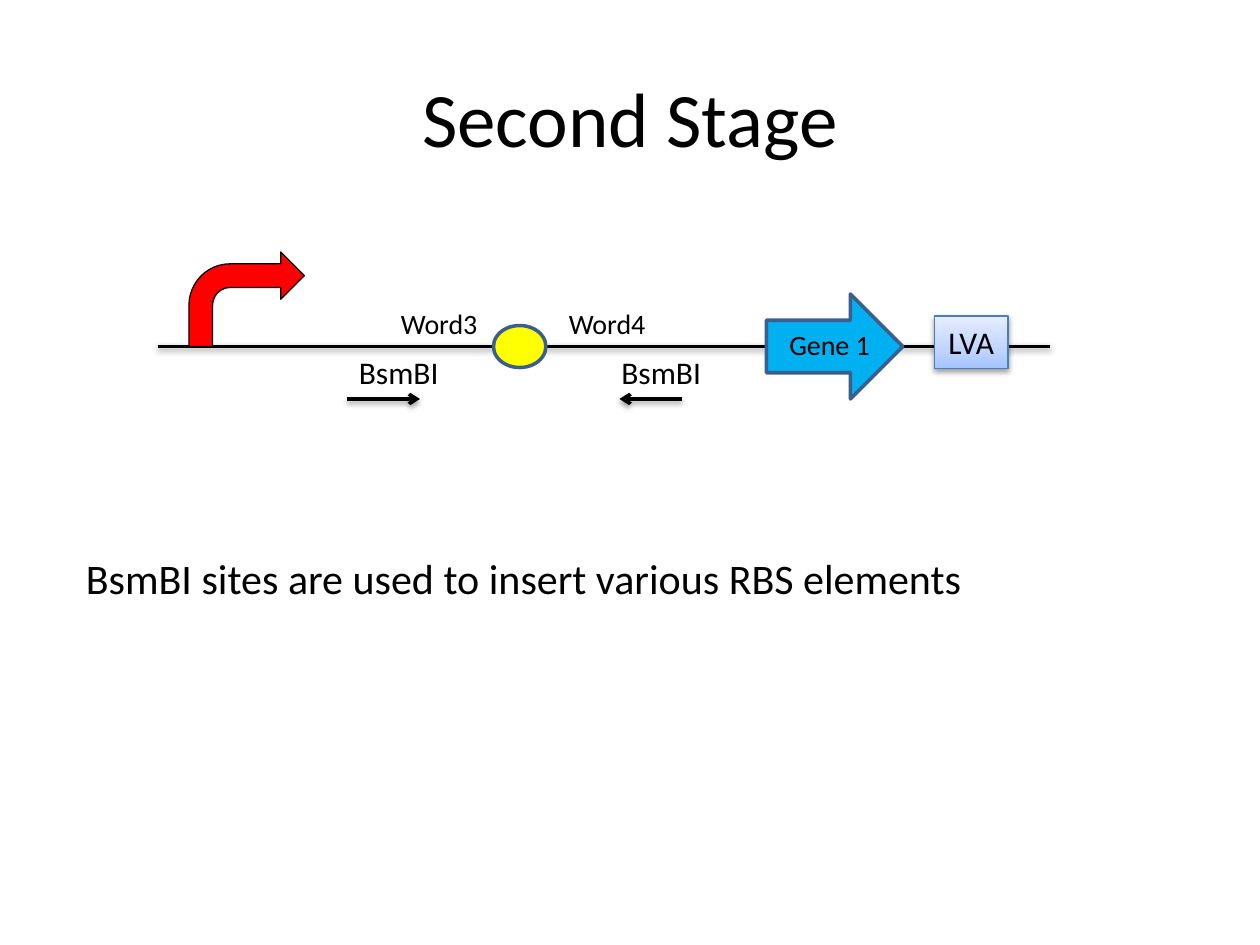
from copy import deepcopy

from lxml import etree
from pptx import Presentation
from pptx.dml.color import RGBColor
from pptx.enum.shapes import MSO_CONNECTOR, MSO_SHAPE
from pptx.enum.text import MSO_ANCHOR, MSO_AUTO_SIZE, PP_ALIGN
from pptx.oxml import parse_xml
from pptx.oxml.ns import nsdecls, qn
from pptx.util import Inches, Pt

STRAIGHT = MSO_CONNECTOR.STRAIGHT
RECTANGLE = MSO_SHAPE.RECTANGLE
ELLIPSE = MSO_SHAPE.OVAL
RIGHT_ARROW = MSO_SHAPE.RIGHT_ARROW
BENT_ARROW = MSO_SHAPE.BENT_ARROW
MIDDLE, TOP = MSO_ANCHOR.MIDDLE, MSO_ANCHOR.TOP
CENTER, LEFT = PP_ALIGN.CENTER, PP_ALIGN.LEFT
FIT_SHAPE = MSO_AUTO_SIZE.SHAPE_TO_FIT_TEXT

FONT = "Calibri"
COLORS = {
    "ink": "000000",
    "gene": "00B0F0",
    "site": "FFFF00",
    "promoter": "FF0000",
    "outline": "3A5F8C",
    "tag_outline": "4B7EBC",
}
TAG_STOPS = [(0, "A4C4FF"), (0.35, "BFD4FF"), (1, "E6EEFF")]
BASELINE_ROW = 33


def grid(cells):
    """Convert grid cells, twelve to the inch, to a length."""
    return Inches(cells / 12)


def color(name):
    """Look up a palette colour."""
    return RGBColor.from_string(COLORS[name])


def write(shape, text, size, align=LEFT, anchor=TOP):
    """Put one formatted paragraph into a shape."""
    frame = shape.text_frame
    frame.text = text
    frame.word_wrap = True
    frame.vertical_anchor = anchor
    para = frame.paragraphs[0]
    para.alignment = align
    font = para.runs[0].font
    font.name, font.size = FONT, Pt(size)
    font.color.rgb = color("ink")


def add_label(shapes, text, column, row, width, height, size):
    """Add a left-aligned text box that grows with its text."""
    box = shapes.add_textbox(*map(grid, (column, row, width, height)))
    write(box, text, size)
    box.text_frame.auto_size = FIT_SHAPE


def add_shadow(shape):
    """Give a shape or line a soft shadow below it."""
    shape._element.spPr.append(parse_xml(
        f'<a:effectLst {nsdecls("a")}><a:outerShdw blurRad="40000" dist="20000"'
        ' dir="5400000" rotWithShape="0"><a:srgbClr val="000000">'
        '<a:alpha val="38000"/></a:srgbClr></a:outerShdw></a:effectLst>'))


def add_line(shapes, start, end, row, arrow=False):
    """Add a shadowed horizontal line, with an arrowhead if asked."""
    line = shapes.add_connector(STRAIGHT, *map(grid, (start, row, end, row)))
    line.line.color.rgb = color("ink")
    line.line.width = Pt(2)
    if arrow:
        etree.SubElement(line.line._get_or_add_ln(), qn("a:tailEnd"), type="arrow")
    add_shadow(line)


def add_part(shapes, kind, column, row, width, height, fill, outline, weight):
    """Add a filled and outlined part of the construct."""
    part = shapes.add_shape(kind, *map(grid, (column, row, width, height)))
    part.fill.solid()
    part.fill.fore_color.rgb = color(fill)
    part.line.color.rgb = color(outline)
    part.line.width = Pt(weight)
    part.shadow.inherit = False


def add_cut_site(shapes, column, start, end):
    """Add a grouped enzyme label with its direction arrow."""
    site = shapes.add_group_shape().shapes
    add_label(site, "BsmBI", column, BASELINE_ROW, 12, 4.8, 18)
    add_line(site, start, end, BASELINE_ROW + 5, arrow=True)


def add_tag(shapes, text, column, row, width, height):
    """Add a gradient box holding the tag name."""
    tag = shapes.add_shape(RECTANGLE, *map(grid, (column, row, width, height)))
    tag.fill.gradient()
    tag.fill.gradient_angle = 90
    stop_list = tag._element.spPr.find(".//" + qn("a:gsLst"))
    stop_list.append(deepcopy(stop_list[0]))
    for stop, (position, shade) in zip(tag.fill.gradient_stops, TAG_STOPS):
        stop.position = position
        stop.color.rgb = RGBColor.from_string(shade)
    tag.line.color.rgb = color("tag_outline")
    tag.line.width = Pt(0.75)
    add_shadow(tag)
    write(tag, text, 18, CENTER, MIDDLE)
    tag.text_frame.word_wrap = False


def main():
    """Build the slide and save the deck."""
    deck = Presentation()
    deck.slide_width, deck.slide_height = grid(120), grid(90)
    shapes = deck.slides.add_slide(deck.slide_layouts[6]).shapes

    title = shapes.add_textbox(*map(grid, (6, 3.6, 108, 15)))
    write(title, "Second Stage", 44, CENTER, MIDDLE)

    add_line(shapes, 15, 100, BASELINE_ROW)
    add_part(shapes, RIGHT_ARROW, 73, 28, 13, 10, "gene", "outline", 2)
    add_part(shapes, ELLIPSE, 47, 31, 5, 4, "site", "outline", 2)
    add_label(shapes, "Gene 1", 74, 30.6, 11.5, 4.4, 16)
    add_label(shapes, "BsmBI sites are used to insert various RBS elements",
              7, 52, 108, 6, 24)
    for text, column in (("Word4", 53), ("Word3", 37)):
        add_label(shapes, text, column, 28.6, 12, 4.4, 16)
    add_cut_site(shapes, 58, 65, 59)
    add_cut_site(shapes, 33, 33, 40)
    add_tag(shapes, "LVA", 89, 30.1, 7, 5)
    add_part(shapes, BENT_ARROW, 18, 24, 11, 9, "promoter", "ink", 0.75)

    deck.save("out.pptx")


if __name__ == "__main__":
    main()
